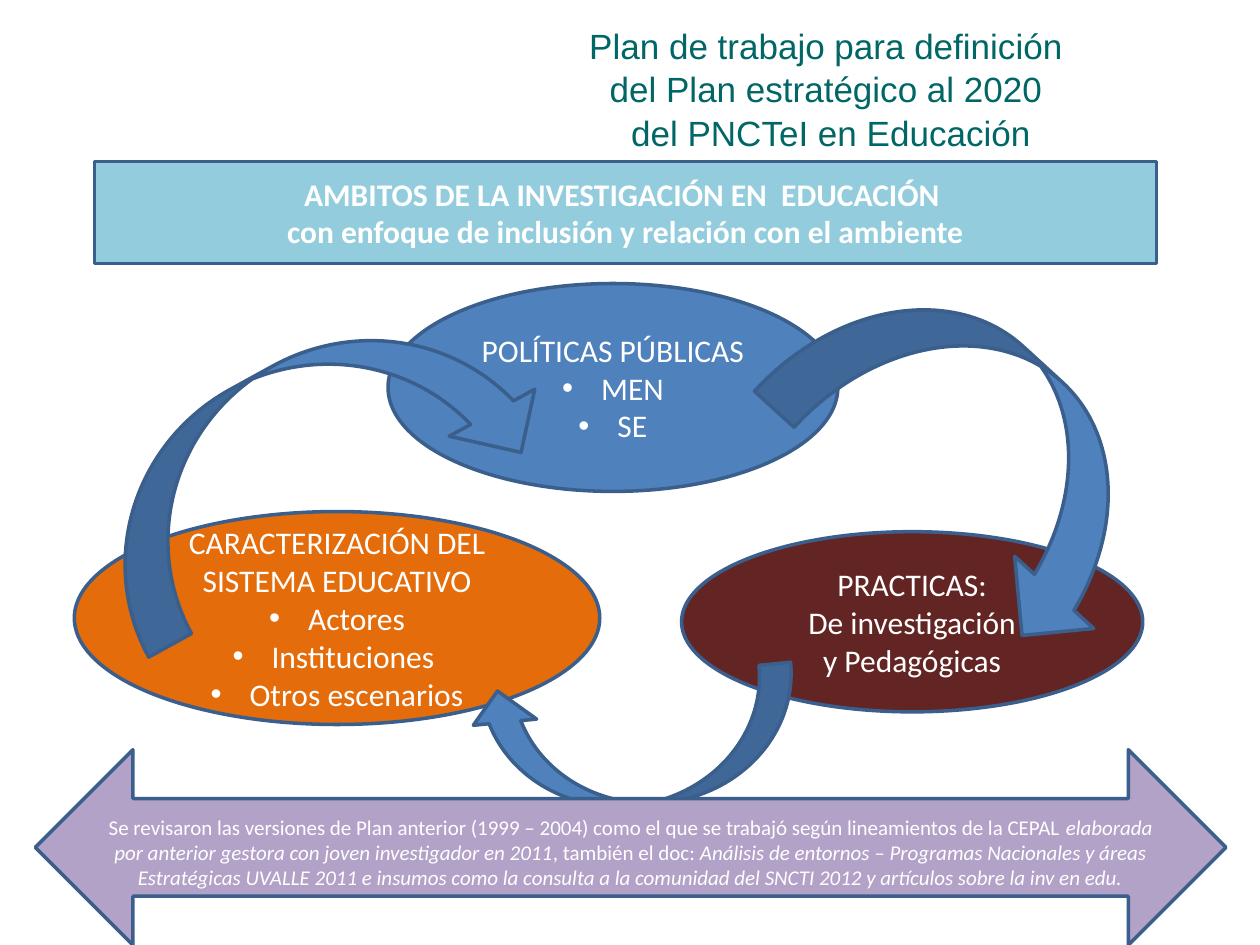
from lxml import etree
from pptx import Presentation
from pptx.dml.color import RGBColor
from pptx.enum.shapes import MSO_SHAPE
from pptx.enum.text import MSO_ANCHOR, MSO_AUTO_SIZE, PP_ALIGN
from pptx.oxml.ns import qn
from pptx.util import Inches, Pt

RECTANGLE, ELLIPSE = MSO_SHAPE.RECTANGLE, MSO_SHAPE.OVAL
CURVED_ARROW, DOUBLE_ARROW = MSO_SHAPE.CURVED_LEFT_ARROW, MSO_SHAPE.LEFT_RIGHT_ARROW
TOP, MIDDLE, BOTTOM = MSO_ANCHOR.TOP, MSO_ANCHOR.MIDDLE, MSO_ANCHOR.BOTTOM
CENTER = PP_ALIGN.CENTER
NO_AUTOFIT = MSO_AUTO_SIZE.NONE

WHITE = RGBColor(0xFF, 0xFF, 0xFF)
TEAL = RGBColor(0x00, 0x66, 0x66)
SKY = RGBColor(0x93, 0xCD, 0xDD)
ORANGE = RGBColor(0xE4, 0x6C, 0x0A)
BLUE = RGBColor(0x4F, 0x81, 0xBD)
MAROON = RGBColor(0x63, 0x25, 0x23)
LILAC = RGBColor(0xB3, 0xA2, 0xC7)
OUTLINE = RGBColor(0x3A, 0x5F, 0x8C)

WIDTH, HEIGHT = Inches(10), Inches(7.5)
COLUMNS, ROWS = 100, 75
TITLE_ONLY = 5
BULLET_INDENT = Inches(0.31)

TITLE = ("Plan de trabajo para definición \v"
         "del Plan estratégico al 2020 \v"
         "del PNCTeI en Educación")
BANNER = ["AMBITOS DE LA INVESTIGACIÓN EN  EDUCACIÓN ",
          "con enfoque de inclusión y relación con el ambiente"]
# Fill, place in grid units, plain lines, bulleted lines
SCOPES = [
    (ORANGE, (5.9, 40.6, 41.7, 16.9), ["CARACTERIZACIÓN DEL SISTEMA EDUCATIVO"],
     ["Actores", "Instituciones ", "Otros escenarios"]),
    (BLUE, (30.8, 22.5, 35.7, 16.5), ["POLÍTICAS PÚBLICAS"], ["MEN", "SE"]),
    (MAROON, (54.1, 42.2, 36.6, 14.3),
     ["PRACTICAS:", "De investigación", "y Pedagógicas"], []),
]
# Place in grid units, rotation in degrees
CYCLE_ARROWS = [
    ((45.3, 45.9, 10.1, 25.9), 84.4),
    ((16.8, 17.5, 15.5, 37.6), 241.2),
    ((69.3, 19.4, 17, 33), 312.4),
]
# Text, italic
SOURCES = [
    ("Se revisaron las versiones de Plan anterior (1999 – 2004) como el que se "
     "trabajó según lineamientos de la CEPAL ", False),
    ("elaborada por anterior gestora con joven investigador en 2011", True),
    (", también el doc: ", False),
    ("Análisis de entornos – Programas Nacionales y áreas Estratégicas UVALLE 2011 "
     "e insumos como la consulta a la comunidad del SNCTI 2012 y artículos sobre "
     "la inv en edu.", True),
]


class SlideBuilder:
    """Holds the text style and the slide being filled."""

    style = {"name": "Calibri", "size": Pt(18), "bold": False, "italic": False}

    def __init__(self, slide):
        self.slide = slide

    def place(self, place):
        """Turn grid columns and rows into left, top, width and height."""
        steps = (WIDTH / COLUMNS, HEIGHT / ROWS) * 2
        return [round(length * step) for length, step in zip(place, steps)]

    def style_font(self, font, color=WHITE, **changes):
        for name, value in {**self.style, **changes}.items():
            setattr(font, name, value)
        font.color.rgb = color

    def title(self, text, place):
        box = self.slide.shapes.title
        box.left, box.top, box.width, box.height = self.place(place)
        frame = box.text_frame
        frame.auto_size, frame.vertical_anchor = NO_AUTOFIT, TOP
        frame.text = text
        para = frame.paragraphs[0]
        para.alignment, para.line_spacing = CENTER, 1.04
        for span in para.runs:
            self.style_font(span.font, TEAL, name="Arial", size=Pt(20))

    def shape(self, kind, place, fill, rotation=0):
        shape = self.slide.shapes.add_shape(kind, *self.place(place))
        shape.rotation = rotation
        shape.shadow.inherit = False
        shape.fill.solid()
        shape.fill.fore_color.rgb = fill
        shape.line.color.rgb = OUTLINE
        shape.line.width = Pt(2)
        return shape

    def label(self, shape, paragraphs, anchor=MIDDLE, bullets=(), **changes):
        """Fill a shape; each paragraph is a list of (text, italic) spans."""
        frame = shape.text_frame
        frame.word_wrap, frame.vertical_anchor = True, anchor
        plain_count = len(paragraphs)
        for index, spans in enumerate([*paragraphs, *bullets]):
            para = frame.add_paragraph() if index else frame.paragraphs[0]
            para.alignment = CENTER
            if index >= plain_count:
                self.add_bullet(para)
            for text, italic in spans:
                span = para.add_run()
                span.text = text
                self.style_font(span.font, italic=italic, **changes)

    def add_bullet(self, para):
        properties = para._p.get_or_add_pPr()
        properties.set("marL", str(BULLET_INDENT))
        properties.set("indent", str(-BULLET_INDENT))
        etree.SubElement(properties, qn("a:buFont")).set("typeface", "Arial")
        etree.SubElement(properties, qn("a:buChar")).set("char", "•")


def upright(lines):
    return [[(line, False)] for line in lines]


def main():
    deck = Presentation()
    deck.slide_width, deck.slide_height = WIDTH, HEIGHT
    page = SlideBuilder(deck.slides.add_slide(deck.slide_layouts[TITLE_ONLY]))

    page.title(TITLE, (35.4, 1.3, 61.1, 4.7))
    banner = page.shape(RECTANGLE, (7.5, 12.8, 84.3, 8.1), SKY)
    page.label(banner, upright(BANNER), bold=True)
    for fill, place, lines, bullets in SCOPES:
        scope = page.shape(ELLIPSE, place, fill)
        page.label(scope, upright(lines), bullets=upright(bullets))
    for place, rotation in CYCLE_ARROWS:
        page.shape(CURVED_ARROW, place, BLUE, rotation)
    sources = page.shape(DOUBLE_ARROW, (2.8, 59.5, 94.5, 15.5), LILAC)
    page.label(sources, [SOURCES], BOTTOM, size=Pt(12))

    deck.save("out.pptx")


if __name__ == "__main__":
    main()
